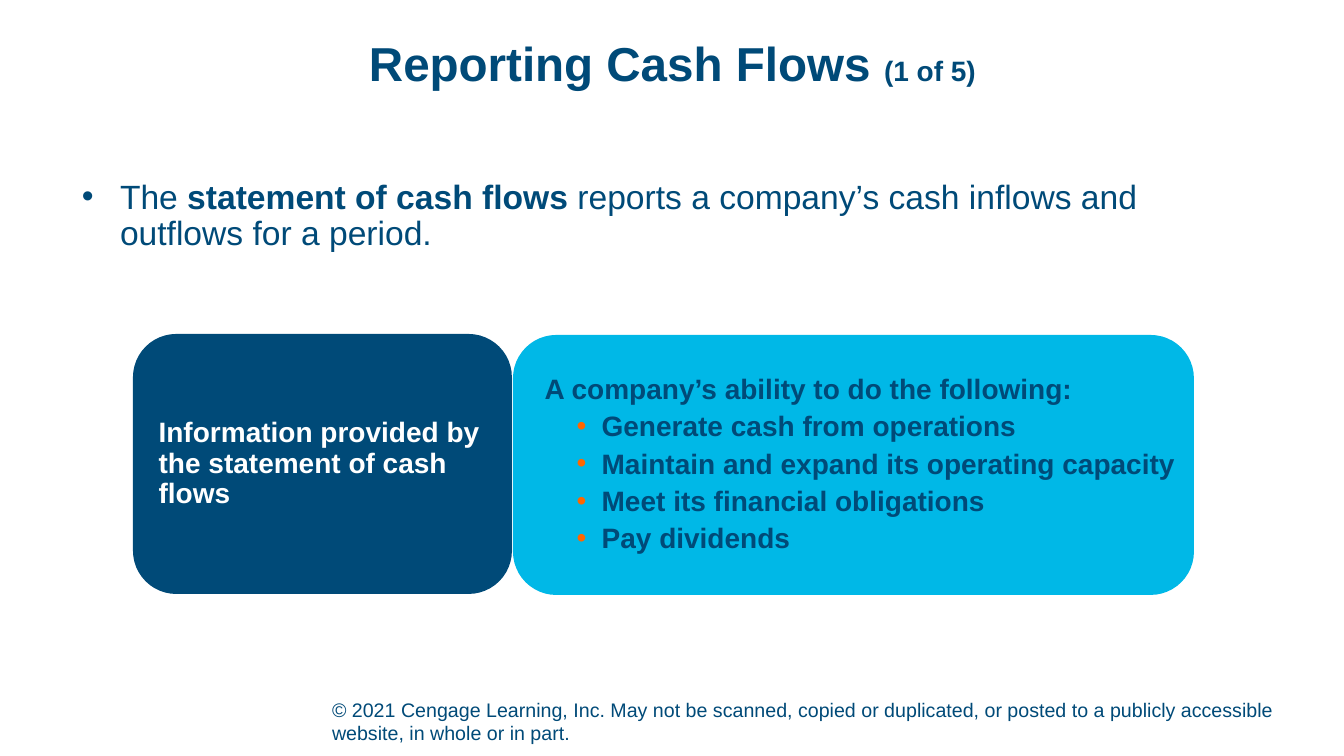
from lxml import etree
from pptx import Presentation
from pptx.dml.color import RGBColor
from pptx.enum.shapes import MSO_SHAPE
from pptx.enum.text import MSO_ANCHOR, MSO_AUTO_SIZE, PP_ALIGN
from pptx.oxml.ns import qn
from pptx.util import Pt

PX = 914400 / 100.8
NAVY = RGBColor(0x00, 0x4A, 0x78)
CYAN = RGBColor(0x00, 0xB8, 0xE7)
ORANGE = RGBColor(0xFF, 0x66, 0x00)
WHITE = RGBColor(0xFF, 0xFF, 0xFF)

ABILITIES = [
    "Generate cash from operations",
    "Maintain and expand its operating capacity",
    "Meet its financial obligations",
    "Pay dividends",
]


def px(n):
    return round(n * PX)


def set_attrs(obj, values):
    for name, value in values.items():
        setattr(obj, name, value)


def place(sp, box):
    set_attrs(sp, dict(zip(("left", "top", "width", "height"), map(px, box))))


def setup_frame(tf, anchor=MSO_ANCHOR.TOP, bottom=0):
    set_attrs(tf, {
        "word_wrap": True, "auto_size": MSO_AUTO_SIZE.NONE,
        "vertical_anchor": anchor, "margin_left": 0, "margin_top": 0,
        "margin_right": 0, "margin_bottom": px(bottom),
    })


def set_indent(p, left, hanging=0, bullet=None):
    """Indent a paragraph, with a bullet if a colour is given."""
    pPr = p._p.get_or_add_pPr()
    pPr.set("marL", str(px(left)))
    pPr.set("indent", str(px(-hanging)))
    if bullet is not None:
        clr = etree.SubElement(pPr, qn("a:buClr"))
        etree.SubElement(clr, qn("a:srgbClr"), val=str(bullet))
        etree.SubElement(pPr, qn("a:buFont"), typeface="Arial")
        etree.SubElement(pPr, qn("a:buChar"), char="•")


def write(p, runs, color=NAVY, align=PP_ALIGN.LEFT, spacing=0.9, before=0):
    """Fill a paragraph with (text, size, bold) runs."""
    set_attrs(p, {"alignment": align, "line_spacing": spacing,
                  "space_before": Pt(before)})
    for text, size, bold in runs:
        r = p.add_run()
        r.text = text
        set_attrs(r.font, {"name": "Arial", "size": Pt(size), "bold": bold})
        r.font.color.rgb = color


def add_title(s, box):
    sp = s.shapes.title
    place(sp, box)
    setup_frame(sp.text_frame)
    write(sp.text_frame.paragraphs[0],
          [("Reporting Cash Flows ", 34, True), ("(1 of 5)", 20, True)],
          align=PP_ALIGN.CENTER)


def add_definition(s, box):
    sp = s.placeholders[1]
    place(sp, box)
    setup_frame(sp.text_frame)
    p = sp.text_frame.paragraphs[0]
    set_indent(p, 38, 38, NAVY)
    write(p, [("The ", 24, False), ("statement of cash flows ", 24, True),
              ("reports a company’s cash inflows and outflows for a period.",
               24, False)])


def add_panel(s, box, fill):
    sp = s.shapes.add_shape(MSO_SHAPE.ROUNDED_RECTANGLE, *map(px, box))
    sp.shadow.inherit = False
    sp.fill.solid()
    sp.fill.fore_color.rgb = fill
    sp.line.fill.background()
    setup_frame(sp.text_frame, MSO_ANCHOR.MIDDLE)
    return sp.text_frame


def add_information(s, box):
    left, top, width, height = box
    label_width, gap = 379, 1

    # Dark label
    p = add_panel(s, (left, top, label_width, height), NAVY).paragraphs[0]
    set_indent(p, 13)
    write(p, [("Information provided by the statement of cash flows", 20, True)],
          color=WHITE)

    # Light panel with the list
    offset = label_width + gap
    tf = add_panel(s, (left + offset, top + 1, width - offset, height), CYAN)
    p = tf.paragraphs[0]
    set_indent(p, 19)
    write(p, [("A company’s ability to do the following:", 20, True)])
    for ability in ABILITIES:
        p = tf.add_paragraph()
        p.level = 1
        set_indent(p, 76, 25, ORANGE)
        write(p, [(ability, 20, True)], before=5)


def add_copyright(s, box):
    tf = s.shapes.add_textbox(*map(px, box)).text_frame
    setup_frame(tf, MSO_ANCHOR.BOTTOM, bottom=5)
    write(tf.paragraphs[0], [(
        "© 2021 Cengage Learning, Inc. May not be scanned, copied or "
        "duplicated, or posted to a publicly accessible website, in whole "
        "or in part.", 14, False)], spacing=1.0)


def main():
    prs = Presentation()
    set_attrs(prs, {"slide_width": px(1344), "slide_height": px(756)})
    s = prs.slides.add_slide(prs.slide_layouts[1])
    add_copyright(s, (332, 698, 987, 52))
    add_title(s, (93, 40, 1159, 75))
    add_definition(s, (82, 180, 1180, 77))
    add_information(s, (133, 334, 1061, 260))
    prs.save("out.pptx")


if __name__ == "__main__":
    main()
